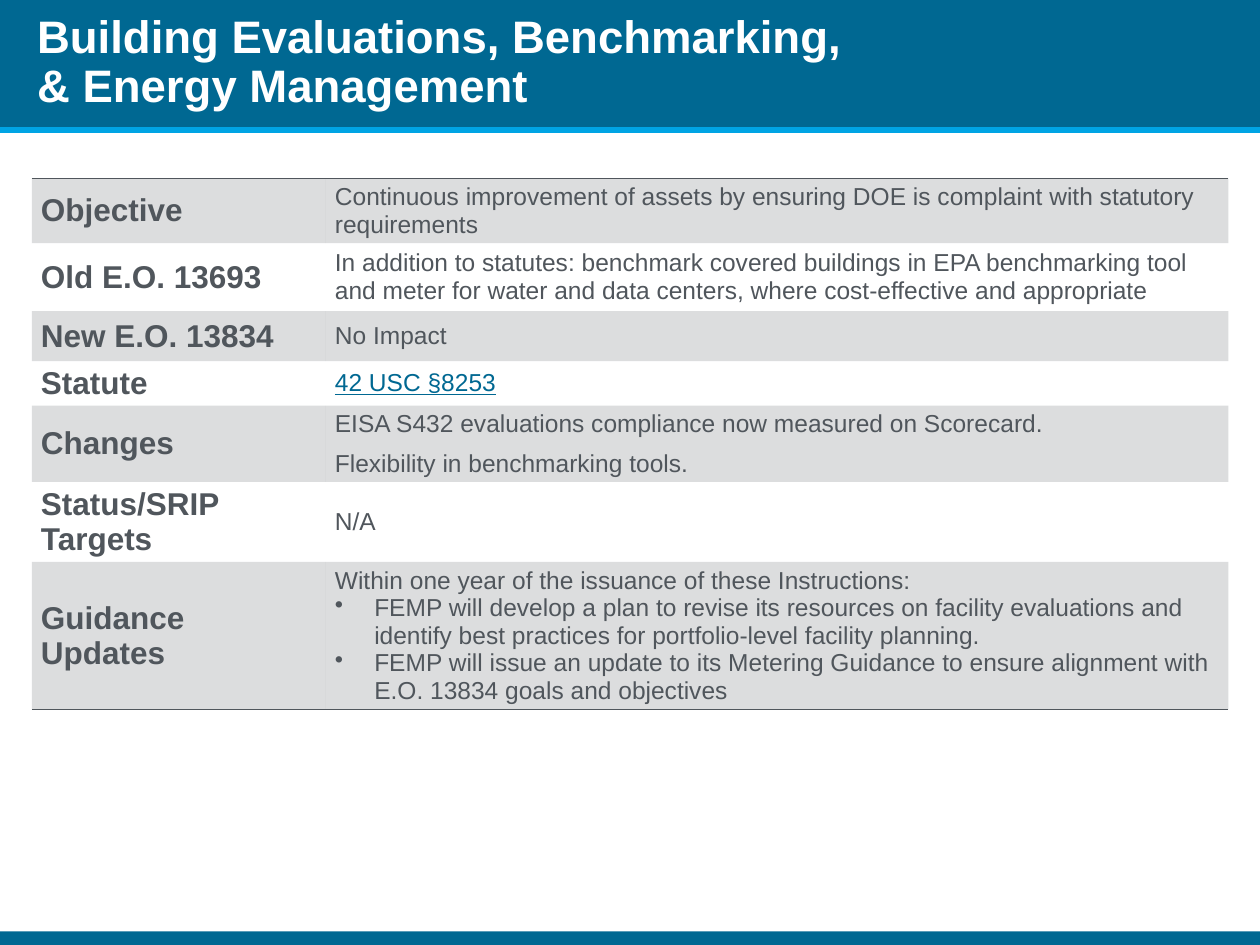
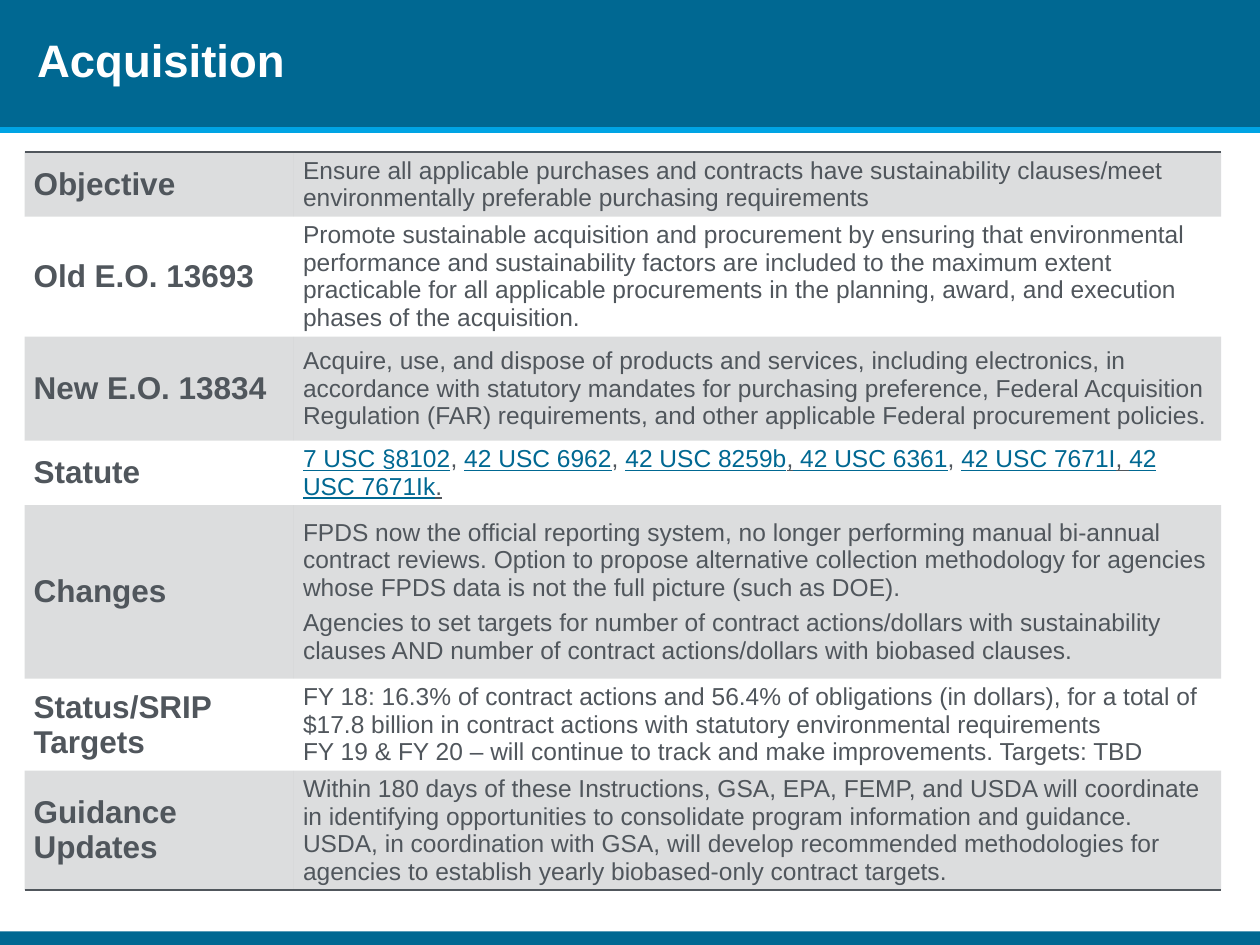
from lxml import etree
from pptx import Presentation
from pptx.dml.color import RGBColor
from pptx.enum import shapes, text
from pptx.oxml import ns
from pptx.util import Pt

BLUE = RGBColor(0x00, 0x68, 0x92)
SKY = RGBColor(0x00, 0xA4, 0xE4)
GRAY = RGBColor(0x50, 0x56, 0x5C)
WHITE = RGBColor(0xFF, 0xFF, 0xFF)
FONT = "Arial"
PLAIN, LINK, LINK_GAP = (GRAY, False), (BLUE, True), (GRAY, True)
NO_STYLE_NO_GRID = "{2D5ABB26-0587-4C30-8999-92F81FD0307C}"
BULLET = "• "
BULLET_INDENT = Pt(22.5)

ROW_LABELS = ["Objective", "Old E.O. 13693", "New E.O. 13834", "Statute", "Changes",
              "Status/SRIP Targets", "Guidance Updates"]

# Each cell is a list of paragraphs; a paragraph is a string or a list of (text, style) runs.
TOPICS = [
    {
        "title": "Building Evaluations, Benchmarking, & Energy Management",
        "title_width": 490,
        "table_at": (18.2, 102),
        "columns": (168, 515.8),
        "rows": (36.9, 38.9, 28.6, 25.4, 43.7, 45.7, 84.3),
        "changes_gap": 7,
        "cells": [
            ["Continuous improvement of assets by ensuring DOE is complaint with statutory "
             "requirements"],
            ["In addition to statutes: benchmark covered buildings in EPA benchmarking tool and "
             "meter for water and data centers, where cost-effective and appropriate"],
            ["No Impact"],
            [[("42 USC §8253", LINK)]],
            ["EISA S432 evaluations compliance now measured on Scorecard.",
             "Flexibility in benchmarking tools."],
            ["N/A"],
            ["Within one year of the issuance of these Instructions:",
             BULLET + "FEMP will develop a plan to revise its resources on facility evaluations "
             "and identify best practices for portfolio-level facility planning.",
             BULLET + "FEMP will issue an update to its Metering Guidance to ensure alignment "
             "with E.O. 13834 goals and objectives"],
        ],
    },
    {
        "title": "Acquisition",
        "title_width": 446,
        "table_at": (14, 86.9),
        "columns": (154, 529.8),
        "rows": (36.9, 68.6, 59.4, 36.9, 99.2, 52.6, 68),
        "changes_gap": 4.5,
        "cells": [
            ["Ensure all applicable purchases and contracts have sustainability clauses/meet "
             "environmentally preferable purchasing requirements"],
            ["Promote sustainable acquisition and procurement by ensuring that environmental "
             "performance and sustainability factors are included to the maximum extent "
             "practicable for all applicable procurements in the planning, award, and execution "
             "phases of the acquisition."],
            ["Acquire, use, and dispose of products and services, including electronics, in "
             "accordance with statutory mandates for purchasing preference, Federal Acquisition "
             "Regulation (FAR) requirements, and other applicable Federal procurement policies."],
            [[("7 USC §8102", LINK), (", ", PLAIN), ("42 USC 6962", LINK), (", ", PLAIN),
              ("42 USC 8259b", LINK), (",", LINK_GAP), (" 42 USC 6361", LINK), (", ", PLAIN),
              ("42 USC 7671I", LINK), (", ", LINK_GAP), ("42 USC 7671Ik", LINK),
              (".", LINK_GAP)]],
            ["FPDS now the official reporting system, no longer performing manual bi-annual "
             "contract reviews. Option to propose alternative collection methodology for "
             "agencies whose FPDS data is not the full picture (such as DOE).",
             "Agencies to set targets for number of contract actions/dollars with sustainability "
             "clauses AND number of contract actions/dollars with biobased clauses."],
            ["FY 18: 16.3% of contract actions and 56.4% of obligations (in dollars), for a "
             "total of $17.8 billion in contract actions with statutory environmental "
             "requirements",
             "FY 19 & FY 20 – will continue to track and make improvements. Targets: TBD"],
            ["Within 180 days of these Instructions, GSA, EPA, FEMP, and USDA will coordinate in "
             "identifying opportunities to consolidate program information and guidance. USDA, "
             "in coordination with GSA, will develop recommended methodologies for agencies to "
             "establish yearly biobased-only contract targets."],
        ],
    },
]


def fill_cell(cell, paragraphs, size, bold, gap=0):
    """Write paragraphs into a cell, with gap points before each one but the first."""
    cell.vertical_anchor = text.MSO_ANCHOR.MIDDLE
    cell.margin_left = cell.margin_right = Pt(5.2)
    cell.margin_top = cell.margin_bottom = Pt(2.6)
    for index, content in enumerate(paragraphs):
        frame = cell.text_frame
        paragraph = frame.add_paragraph() if index else frame.paragraphs[0]
        if index and gap:
            paragraph.space_before = Pt(gap)
        runs = [(content, PLAIN)] if isinstance(content, str) else content
        if content[0] == BULLET[0]:
            runs = [(content.removeprefix(BULLET), PLAIN)]
            properties = paragraph._p.get_or_add_pPr()
            properties.set("marL", str(BULLET_INDENT))
            properties.set("indent", str(-BULLET_INDENT))
            etree.SubElement(properties, ns.qn("a:buChar"), char=BULLET[0])
        for run_text, (color, underline) in runs:
            run = paragraph.add_run()
            run.text = run_text
            run.font.name, run.font.size, run.font.bold = FONT, Pt(size), bold
            run.font.color.rgb = color
            run.font.underline = underline


def add_border(cell, side):
    line = etree.Element(ns.qn(f"a:{side}"), w=str(Pt(1)))
    fill = etree.SubElement(line, ns.qn("a:solidFill"))
    etree.SubElement(fill, ns.qn("a:srgbClr"), val=str(GRAY))
    cell._tc.get_or_add_tcPr().insert(0, line)


presentation = Presentation()
presentation.slide_width, presentation.slide_height = Pt(720), Pt(540)
layout = presentation.slide_layouts[5]
slides = [presentation.slides.add_slide(layout) for topic in TOPICS]

# The bands are drawn once and moved into the layout, behind its placeholders.
bands = [(0, 72.7, BLUE), (532.2, 7.8, BLUE), (72.7, 3.3, SKY)]
for index, (top, height, color) in enumerate(bands):
    band = slides[0].shapes.add_shape(
        shapes.MSO_SHAPE.RECTANGLE, 0, Pt(top), Pt(720), Pt(height))
    band.shadow.inherit = False
    band.fill.solid()
    band.fill.fore_color.rgb = color
    band.line.fill.background()
    band.element.nvSpPr.cNvPr.set("id", str(20 + index))
    layout.shapes.element.insert(2 + index, band.element)

for slide, topic in zip(slides, TOPICS):
    title = slide.shapes.title
    title.left, title.top = Pt(14), Pt(0)
    title.width, title.height = Pt(topic["title_width"]), Pt(71.3)
    title.text_frame.text = topic["title"]
    title.text_frame.word_wrap = True
    title.text_frame.auto_size = text.MSO_AUTO_SIZE.NONE
    title.text_frame.vertical_anchor = text.MSO_ANCHOR.MIDDLE
    paragraph = title.text_frame.paragraphs[0]
    paragraph.alignment = text.PP_ALIGN.LEFT
    paragraph.line_spacing = Pt(28)
    font = paragraph.runs[0].font
    font.name, font.size, font.bold = FONT, Pt(26), True
    font.color.rgb = WHITE

    left, top = topic["table_at"]
    frame = slide.shapes.add_table(
        len(ROW_LABELS), 2, Pt(left), Pt(top),
        Pt(sum(topic["columns"])), Pt(sum(topic["rows"])))
    table = frame.table
    table.first_row = table.horz_banding = False
    table._tbl.tblPr.find(ns.qn("a:tableStyleId")).text = NO_STYLE_NO_GRID
    for column, width in zip(table.columns, topic["columns"]):
        column.width = Pt(width)

    for index, label in enumerate(ROW_LABELS):
        row = table.rows[index]
        row.height = Pt(topic["rows"][index])
        gap = topic["changes_gap"] if label == "Changes" else 0
        fill_cell(row.cells[0], [label], 18, True)
        fill_cell(row.cells[1], topic["cells"][index], 14, False, gap)
        for cell in row.cells:
            if index % 2:
                cell.fill.background()
            else:
                cell.fill.solid()
                cell.fill.fore_color.rgb = GRAY
                color = cell._tc.tcPr.find(".//" + ns.qn("a:srgbClr"))
                etree.SubElement(color, ns.qn("a:alpha"), val="20000")
            if index == 0:
                add_border(cell, "lnT")
            if index == len(ROW_LABELS) - 1:
                add_border(cell, "lnB")

presentation.save("out.pptx")
